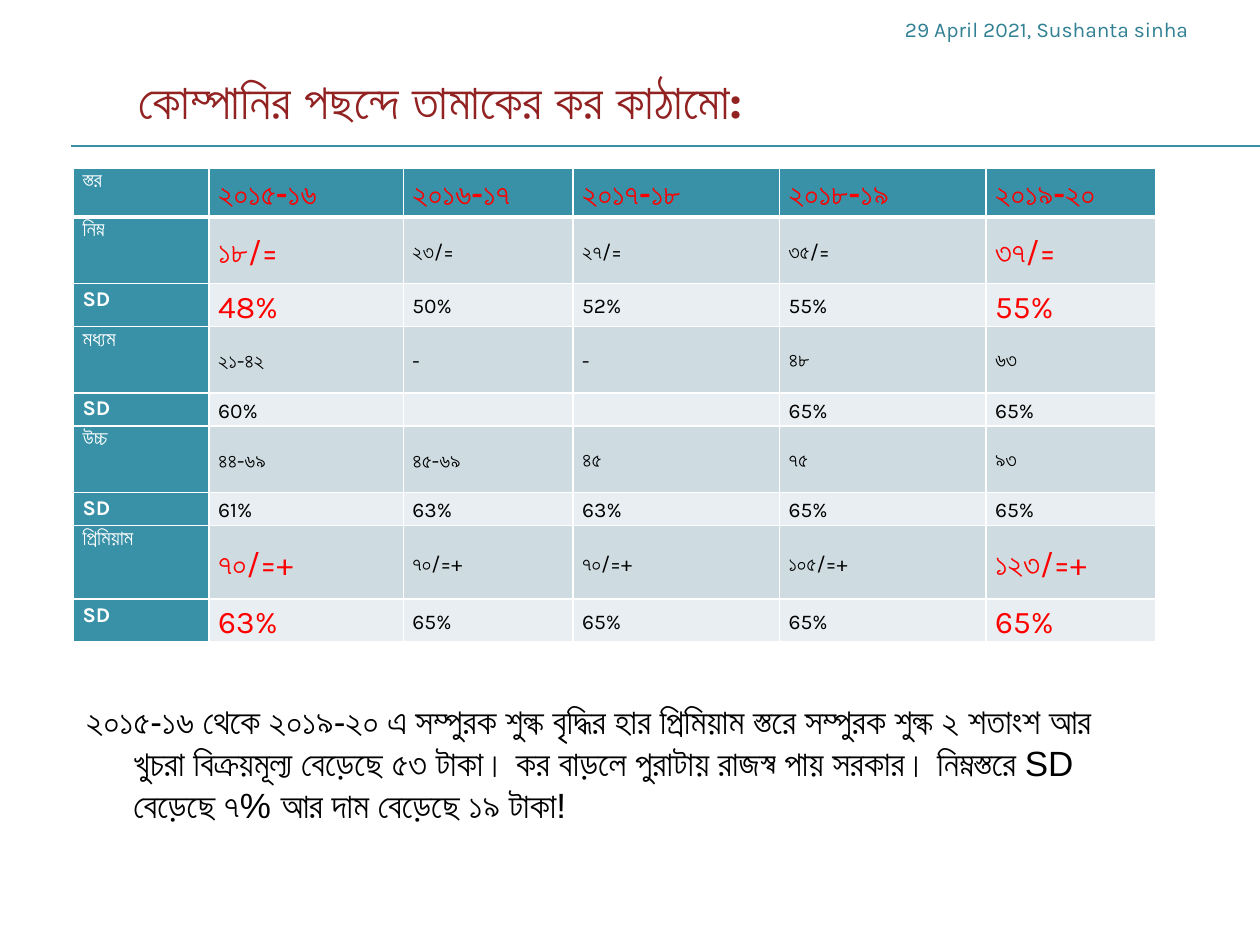
from lxml.etree import SubElement
from pptx import Presentation
from pptx.dml.color import RGBColor
from pptx.enum.shapes import MSO_CONNECTOR
from pptx.enum.text import MSO_ANCHOR, MSO_AUTO_SIZE, PP_ALIGN
from pptx.oxml.ns import qn
from pptx.util import Pt

HEX = {"teal": "3891A7", "dark": "CEDCE1", "light": "E8EEF1", "white": "FFFFFF",
       "black": "000000", "red": "FF0000", "maroon": "922222", "date": "318093"}

TITLE = "কোম্পানির পছন্দে তামাকের কর কাঠামো:"
DATE = "29 April 2021, Sushanta sinha"
BODY = ("২০১৫-১৬ থেকে ২০১৯-২০ এ সম্পুরক শুল্ক বৃদ্ধির হার প্রিমিয়াম স্তরে সম্পুরক শুল্ক "
        "২ শতাংশ আর খুচরা বিক্রয়মূল্য বেড়েছে ৫৩ টাকা। কর বাড়লে পুরাটায় রাজস্ব পায় সরকার। "
        "নিম্নস্তরে SD বেড়েছে ৭% আর দাম বেড়েছে ১৯ টাকা!")
ROWS = [
    ("স্তর", "২০১৫-১৬", "২০১৬-১৭", "২০১৭-১৮", "২০১৮-১৯", "২০১৯-২০"),
    ("নিম্ন", "১৮/=", "২৩/=", "২৭/=", "৩৫/=", "৩৭/="),
    ("SD", "48%", "50%", "52%", "55%", "55%"),
    ("মধ্যম", "২১-৪২", "-", "-", "৪৮", "৬৩"),
    ("SD", "60%", "", "", "65%", "65%"),
    ("উচ্চ", "৪৪-৬৯", "৪৫-৬৯", "৪৫", "৭৫", "৯৩"),
    ("SD", "61%", "63%", "63%", "65%", "65%"),
    ("প্রিমিয়াম", "৭০/=+", "৭০/=+", "৭০/=+", "১০৫/=+", "১২৩/=+"),
    ("SD", "63%", "65%", "65%", "65%", "65%"),
]
WIDTHS = [77.5, 111, 97, 118, 118, 97]
HEIGHTS = [28, 38, 24.5, 38, 19, 38, 19, 42, 24.5]
KEY_ROWS, KEY_COLS = (1, 2, 7, 8), (1, 5)

LABEL = {"name": "Karla", "size": Pt(12), "bold": True, "color": "white"}
HEAD = LABEL | {"size": Pt(18), "color": "red"}
KEY = HEAD | {"bold": False}
PLAIN = LABEL | {"bold": False, "color": "black"}


def paint(fill, name):
    fill.solid()
    fill.fore_color.rgb = RGBColor.from_string(HEX[name])


def write(para, text, style):
    run = para.add_run()
    run.text = text
    for name, value in style.items():
        if name == "color":
            paint(run.font.fill, value)
        else:
            setattr(run.font, name, value)


def place(shape, box, text, style):
    """Move a text shape, set its frame and fill its first paragraph."""
    for name, value in zip(("left", "top", "width", "height"), box):
        setattr(shape, name, Pt(value))
    frame = shape.text_frame
    form = {"word_wrap": True, "auto_size": MSO_AUTO_SIZE.NONE,
            "vertical_anchor": MSO_ANCHOR.TOP}
    for name, value in form.items():
        setattr(frame, name, value)
    para = frame.paragraphs[0]
    para.alignment = PP_ALIGN.LEFT
    para.space_before = Pt(0)
    write(para, text, style)
    return para


def edge(cell, head):
    """Draw white borders, thicker below the header row."""
    props = cell._tc.get_or_add_tcPr()
    for spot, side in enumerate(("lnL", "lnR", "lnT", "lnB")):
        wide = 3 if head and side == "lnB" else 1
        line = props.makeelement(qn(f"a:{side}"), {"w": str(Pt(wide))})
        fill = SubElement(line, qn("a:solidFill"))
        SubElement(fill, qn("a:srgbClr"), val=HEX["white"])
        props.insert(spot, line)


def fit(cell, row, col, text):
    if col == 0:
        style, fill = LABEL, "teal"
    elif row == 0:
        style, fill = HEAD, "teal"
    else:
        style = KEY if row in KEY_ROWS and col in KEY_COLS else PLAIN
        fill = "dark" if row % 2 else "light"
    form = {"margin_left": Pt(5.2), "margin_right": Pt(5.2),
            "margin_top": 0, "margin_bottom": 0,
            "vertical_anchor": MSO_ANCHOR.MIDDLE if col else MSO_ANCHOR.TOP}
    for name, value in form.items():
        setattr(cell, name, value)
    paint(cell.fill, fill)
    edge(cell, row == 0)
    para = cell.text_frame.paragraphs[0]
    para.line_spacing = 1.15
    if text:
        write(para, text, style)
    else:
        SubElement(para._p, qn("a:endParaRPr"), sz="1200")


def main():
    deck = Presentation()
    deck.slide_width, deck.slide_height = Pt(720), Pt(540)
    slide = deck.slides.add_slide(deck.slide_layouts[1])
    shapes = slide.shapes

    for y in (83, 83.5):
        rule = shapes.add_connector(MSO_CONNECTOR.STRAIGHT, Pt(40.5), Pt(y), Pt(720), Pt(y))
        rule.line.width = Pt(0.75)
        paint(rule.line.fill, "teal")
        SubElement(rule._element.spPr, qn("a:effectLst"))

    grid = shapes.add_table(len(ROWS), len(WIDTHS), Pt(42), Pt(96),
                            Pt(sum(WIDTHS)), Pt(sum(HEIGHTS))).table
    for col, wide in zip(grid.columns, WIDTHS):
        col.width = Pt(wide)
    for row, high in zip(grid.rows, HEIGHTS):
        row.height = Pt(high)
    for r, row in enumerate(ROWS):
        for c, text in enumerate(row):
            fit(grid.cell(r, c), r, c, text)

    para = place(slide.placeholders[1], (42, 396, 612, 80), BODY,
                 {"name": "Arial", "size": Pt(20), "color": "black"})
    props = para._p.get_or_add_pPr()
    props.set("marL", str(Pt(27)))
    props.set("indent", str(Pt(-27)))
    SubElement(props, qn("a:buNone"))

    place(shapes.add_textbox(0, 0, 0, 0), (510, 6, 198, 23), DATE,
          LABEL | {"bold": False, "color": "date"})
    place(shapes.title, (72, 36.5, 594, 41), TITLE,
          LABEL | {"size": Pt(28), "color": "maroon"})
    deck.save("out.pptx")


if __name__ == "__main__":
    main()
